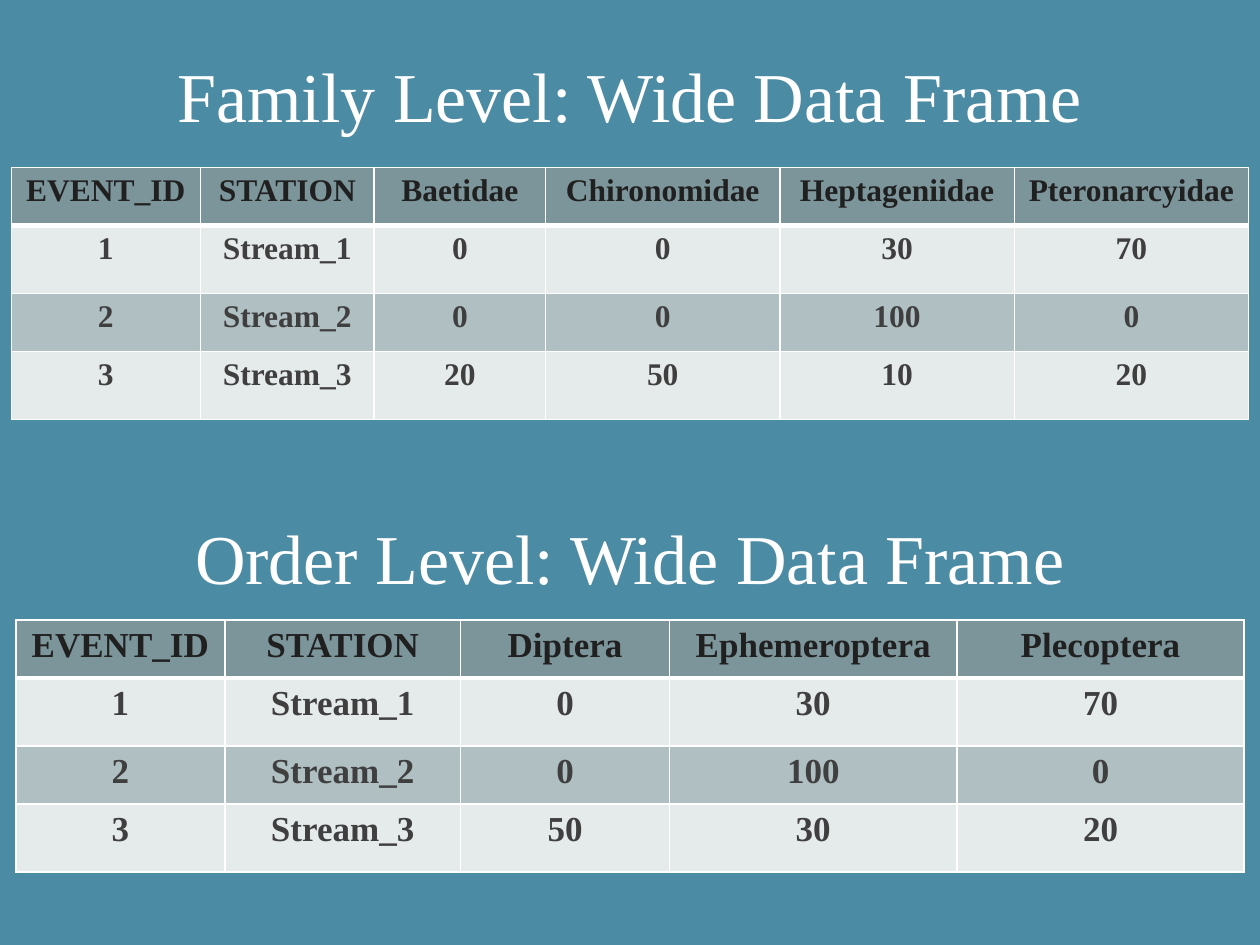
from dataclasses import dataclass

from lxml import etree
from pptx import Presentation
from pptx import util as u
from pptx.dml.color import RGBColor
from pptx.enum import text
from pptx.oxml import ns


@dataclass(frozen=True)
class Theme:
    """Colours, font and type sizes of the slide."""
    background: str = "4C8BA4"
    title: str = "FFFFFF"
    border: str = "FFFFFF"
    header_fill: str = "7C959A"
    header_text: str = "202020"
    body_text: str = "3F3F3F"
    bands: tuple = ("E5EAEB", "B0BFC2")
    font: str = "Times New Roman"
    title_size: int = 40
    family_size: int = 18
    order_size: int = 20
    thin: int = 1
    thick: int = 3


THEME = Theme()
WIDTH, HEIGHT = 10, 7.5
ROW_HEIGHTS = (0.46, 0.54, 0.46, 0.54)

FAMILY_COLUMNS = (1.5, 1.38, 1.36, 1.86, 1.86, 1.86)
FAMILY_ROWS = (
    ("EVENT_ID", "STATION", "Baetidae", "Chironomidae", "Heptageniidae", "Pteronarcyidae"),
    (1, "Stream_1", 0, 0, 30, 70),
    (2, "Stream_2", 0, 0, 100, 0),
    (3, "Stream_3", 20, 50, 10, 20),
)

ORDER_COLUMNS = (1.66, 1.87, 1.66, 2.28, 2.28)
ORDER_ROWS = (
    ("EVENT_ID", "STATION", "Diptera", "Ephemeroptera", "Plecoptera"),
    (1, "Stream_1", 0, 30, 70),
    (2, "Stream_2", 0, 100, 0),
    (3, "Stream_3", 50, 30, 20),
)


def write(frame, words, size, color, bold=False):
    """Put one centred paragraph in a text frame."""
    paragraph = frame.paragraphs[0]
    paragraph.text = str(words)
    paragraph.alignment = text.PP_ALIGN.CENTER
    paragraph.font.name = THEME.font
    paragraph.font.size = u.Pt(size)
    paragraph.font.bold = bold
    paragraph.font.color.rgb = RGBColor.from_string(color)


def add_title(slide, words, top):
    """Add a heading centred across the slide."""
    margin = WIDTH / 20
    shape = slide.shapes.add_textbox(
        u.Inches(margin), u.Inches(top), u.Inches(WIDTH - 2 * margin), u.Inches(HEIGHT / 9))
    frame = shape.text_frame
    frame.word_wrap = True
    frame.vertical_anchor = text.MSO_ANCHOR.MIDDLE
    write(frame, words, THEME.title_size, THEME.title)


def set_borders(cell, top, bottom):
    """Draw the four edges of a cell, with its own top and bottom weights."""
    properties = cell._tc.get_or_add_tcPr()
    weights = {"L": THEME.thin, "R": THEME.thin, "T": top, "B": bottom}
    for side, weight in weights.items():
        line = etree.SubElement(properties, ns.qn(f"a:ln{side}"), w=str(u.Pt(weight)))
        fill = etree.SubElement(line, ns.qn("a:solidFill"))
        etree.SubElement(fill, ns.qn("a:srgbClr"), val=THEME.border)


def style_cell(cell, row, words, size):
    """Fill, border and label a cell according to its row."""
    header = row == 0
    set_borders(cell,
                top=THEME.thick if row == 1 else THEME.thin,
                bottom=THEME.thick if header else THEME.thin)
    fill = THEME.header_fill if header else THEME.bands[(row - 1) % 2]
    cell.fill.solid()
    cell.fill.fore_color.rgb = RGBColor.from_string(fill)
    write(cell.text_frame, words, size,
          THEME.header_text if header else THEME.body_text, bold=True)


def add_data_frame(slide, rows, columns, top, size):
    """Add a banded table centred across the slide."""
    width = sum(columns)
    shape = slide.shapes.add_table(
        len(rows), len(columns), u.Inches((WIDTH - width) / 2), u.Inches(top),
        u.Inches(width), u.Inches(sum(ROW_HEIGHTS)))
    table = shape.table
    for column, column_width in zip(table.columns, columns):
        column.width = u.Inches(column_width)
    for row, height in enumerate(ROW_HEIGHTS):
        table.rows[row].height = u.Inches(height)
        for column, words in enumerate(rows[row]):
            style_cell(table.cell(row, column), row, words, size)


def main():
    """Build the slide and save it."""
    presentation = Presentation()
    presentation.slide_width = u.Inches(WIDTH)
    presentation.slide_height = u.Inches(HEIGHT)
    slide = presentation.slides.add_slide(presentation.slide_layouts[6])
    slide.background.fill.solid()
    slide.background.fill.fore_color.rgb = RGBColor.from_string(THEME.background)

    add_title(slide, "Family Level: Wide Data Frame", 0.33)
    add_data_frame(slide, FAMILY_ROWS, FAMILY_COLUMNS, 1.33, THEME.family_size)
    add_data_frame(slide, ORDER_ROWS, ORDER_COLUMNS, 4.92, THEME.order_size)
    add_title(slide, "Order Level: Wide Data Frame", 4)
    presentation.save("out.pptx")


if __name__ == "__main__":
    main()
